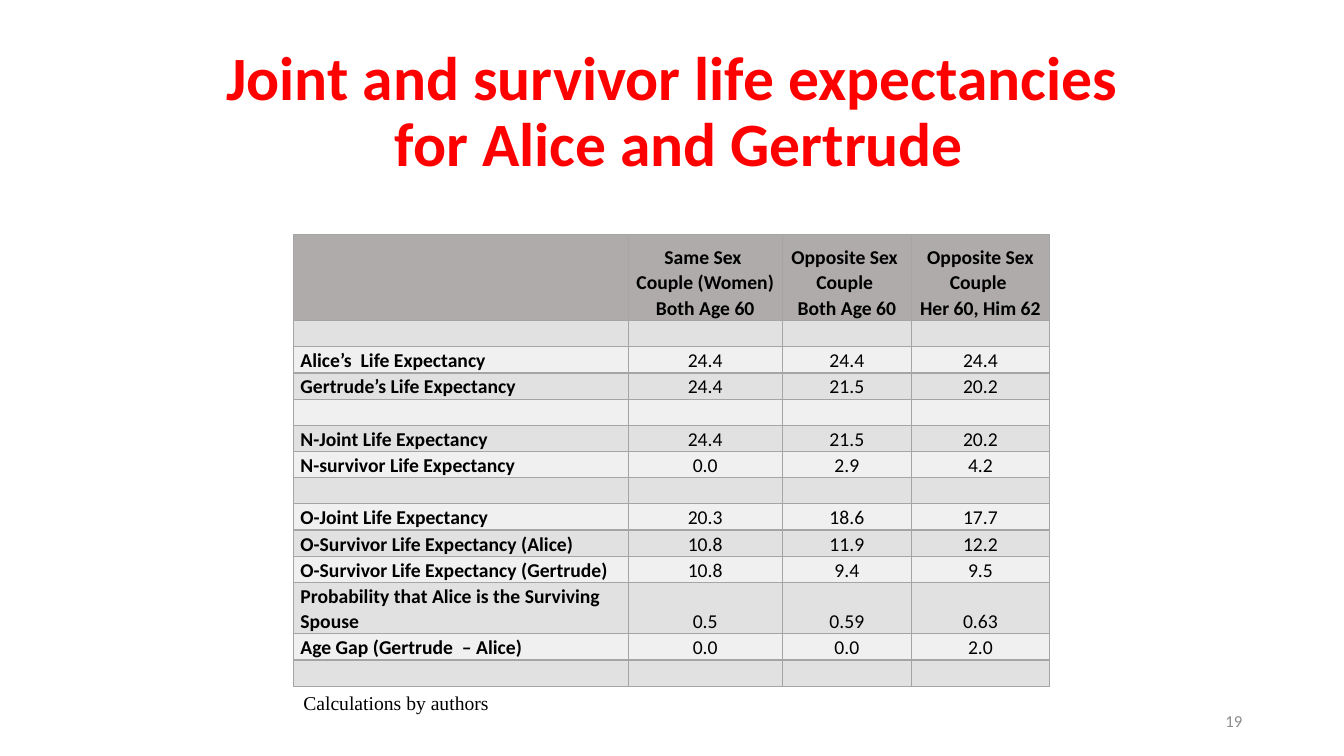
from lxml import etree
from pptx import Presentation
from pptx import util as u
from pptx.dml.color import RGBColor
from pptx.enum import text
from pptx.oxml.ns import qn

LEFT, CENTER, RIGHT = text.PP_ALIGN.LEFT, text.PP_ALIGN.CENTER, text.PP_ALIGN.RIGHT
TOP, MIDDLE, BOTTOM = text.MSO_ANCHOR.TOP, text.MSO_ANCHOR.MIDDLE, text.MSO_ANCHOR.BOTTOM

HEADERS = [
    "",
    "Same Sex \nCouple (Women) \nBoth Age 60",
    "Opposite Sex \nCouple \nBoth Age 60",
    "Opposite Sex\nCouple \nHer 60, Him 62",
]
BLANK = [""] * 4
ROWS = [
    HEADERS,
    BLANK,
    ["Alice’s  Life Expectancy", "24.4", "24.4", "24.4"],
    ["Gertrude’s Life Expectancy", "24.4", "21.5", "20.2"],
    BLANK,
    ["N-Joint Life Expectancy", "24.4", "21.5", "20.2"],
    ["N-survivor Life Expectancy", "0.0", "2.9", "4.2"],
    BLANK,
    ["O-Joint Life Expectancy", "20.3", "18.6", "17.7"],
    ["O-Survivor Life Expectancy (Alice)", "10.8", "11.9", "12.2"],
    ["O-Survivor Life Expectancy (Gertrude)", "10.8", "9.4", "9.5"],
    ["Probability that Alice is the Surviving Spouse", "0.5", "0.59", "0.63"],
    ["Age Gap (Gertrude  – Alice)", "0.0", "0.0", "2.0"],
    BLANK,
]
COLUMN_WIDTHS = [332, 153, 128, 137]
ROW_HEIGHTS = [85] + [26] * 10 + [51] + [26] * 2


def px(length):
    return u.Emu(length * 9144)


def color(value):
    return RGBColor.from_string(value)


def write(frame, content, size=14, font="Calibri", fill="000000", bold=False,
          align=LEFT, spacing=1.0):
    for index, line in enumerate(content.split("\n")):
        para = frame.add_paragraph() if index else frame.paragraphs[0]
        para.text = line
        para.alignment = align
        para.line_spacing = spacing
        for span in para.runs:
            span.font.size = u.Pt(size)
            span.font.name = font
            span.font.bold = bold
            span.font.color.rgb = color(fill)
        if not line:
            ending = etree.SubElement(para._p, qn("a:endParaRPr"))
            ending.set("sz", str(size * 100))


class SlideBuilder:
    header_fill = "AFABAB"
    band_fills = ["F0F0F0", "E1E1E1"]
    border = "A5A5A5"

    def __init__(self, deck):
        self.page = deck.slides.add_slide(deck.slide_layouts[5])

    def title(self, content, left, top, width, height):
        box = self.page.shapes.title
        box.left, box.top, box.width, box.height = map(px, (left, top, width, height))
        frame = box.text_frame
        frame.auto_size = text.MSO_AUTO_SIZE.NONE
        frame.vertical_anchor = MIDDLE
        write(frame, content, size=44, fill="FF0000", bold=True, align=CENTER, spacing=0.9)

    def label(self, content, left, top, width, height, anchor=TOP, **style):
        box = self.page.shapes.add_textbox(*map(px, (left, top, width, height)))
        frame = box.text_frame
        frame.word_wrap = True
        frame.vertical_anchor = anchor
        write(frame, content, **style)

    def table(self, rows, left, top, widths, heights):
        area = map(px, (left, top, sum(widths), sum(heights)))
        grid = self.page.shapes.add_table(len(rows), len(widths), *area).table
        for column, width in zip(grid.columns, widths):
            column.width = px(width)
        for row, height in zip(grid.rows, heights):
            row.height = px(height)
        for r, values in enumerate(rows):
            for c, value in enumerate(values):
                self.cell(grid.cell(r, c), value, r, c)

    def cell(self, cell, value, r, c):
        cell.margin_left = cell.margin_right = px(7)
        cell.margin_top = cell.margin_bottom = 0
        cell.vertical_anchor = BOTTOM
        write(cell.text_frame, value, bold=r == 0 or c == 0,
              align=CENTER if c else LEFT, spacing=1.07)
        self.outline(cell)
        cell.fill.solid()
        cell.fill.fore_color.rgb = color(self.band_fills[r % 2] if r else self.header_fill)

    def outline(self, cell):
        properties = cell._tc.get_or_add_tcPr()
        for side in ("a:lnL", "a:lnR", "a:lnT", "a:lnB"):
            line = etree.SubElement(properties, qn(side), w=str(u.Pt(1)))
            solid = etree.SubElement(line, qn("a:solidFill"))
            etree.SubElement(solid, qn("a:srgbClr"), val=self.border)


def main():
    deck = Presentation()
    deck.slide_width, deck.slide_height = px(1333), px(750)
    slide = SlideBuilder(deck)
    slide.title("Joint and survivor life expectancies\v for Alice and Gertrude",
                92, 40, 1150, 145)
    slide.label("19", 942, 695, 300, 40, anchor=MIDDLE, size=12, fill="8C8C8C", align=RIGHT)
    slide.table(ROWS, 291, 233, COLUMN_WIDTHS, ROW_HEIGHTS)
    slide.label("Calculations by authors", 291, 681, 318, 34, font="Times New Roman")
    deck.save("out.pptx")


if __name__ == "__main__":
    main()
